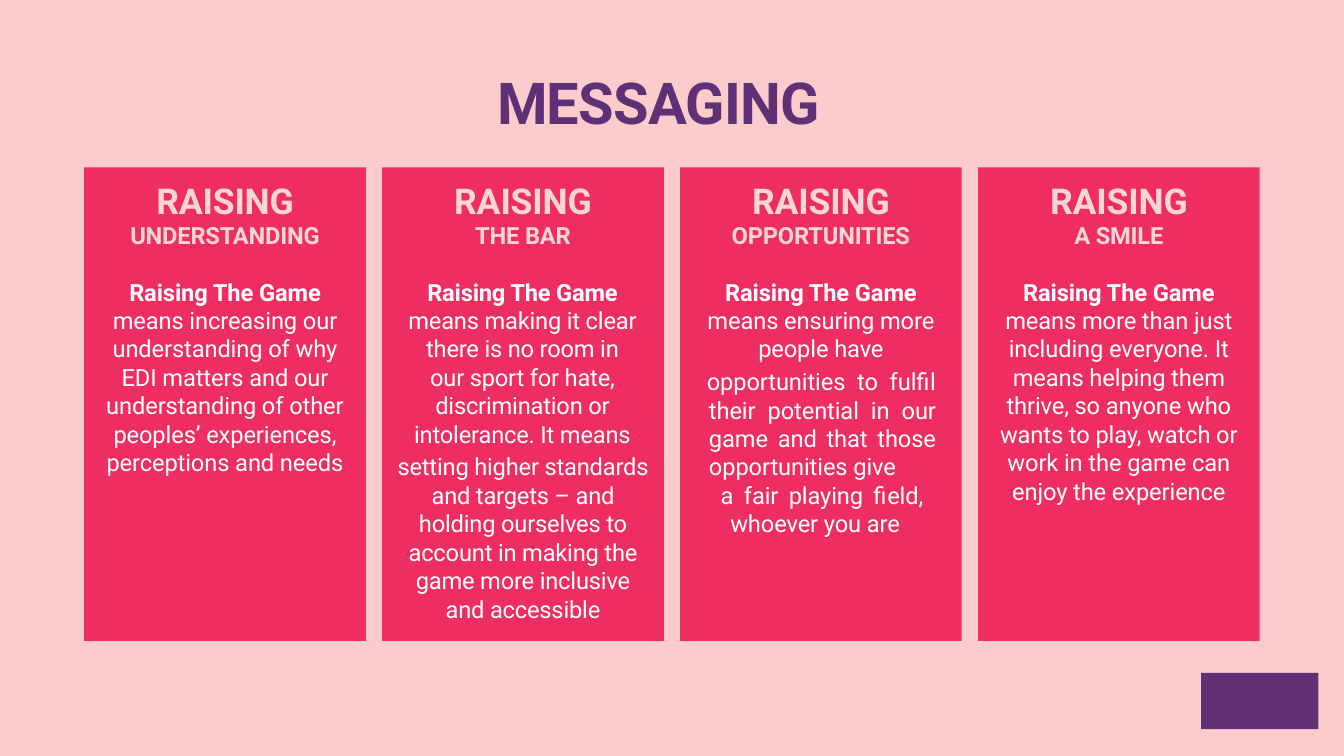
"""Build the messaging slide: a title above four message cards."""
from pptx import Presentation
from pptx.dml.color import RGBColor
from pptx.enum.shapes import MSO_SHAPE
from pptx.enum.text import MSO_ANCHOR, PP_ALIGN
from pptx.util import Inches, Pt

RECT = MSO_SHAPE.RECTANGLE
TOP = MSO_ANCHOR.TOP
LEFT, MID, JUST = PP_ALIGN.LEFT, PP_ALIGN.CENTER, PP_ALIGN.JUSTIFY

FONT = "Roboto"
PINK, RED, ROSE = "FBCCCB", "EE2E62", "FCD6D4"
WHITE, PURPLE = "FFFFFF", "5F3075"

TITLE = "MESSAGING"
HEAD = "RAISING"
LEAD = "Raising The Game "

# Each card: subhead, letter spacing, then (text, align, left, right, first line, space before).
CARDS = [
    ("UNDERSTANDING", -5, [
        ("means increasing our understanding of why EDI matters and our "
         "understanding of other peoples’ experiences, perceptions and needs",
         MID, 0.14, 0.14, 0, 19.3)]),
    ("THE BAR", -10, [
        ("means making it clear there is no room in our sport for hate, "
         "discrimination or intolerance. It means",
         MID, 0.23, 0.24, 0, 19.3),
        ("setting higher standards and targets – and holding ourselves to "
         "account in making the game more inclusive and accessible",
         MID, 0.13, 0.13, 0, 2.9)]),
    ("OPPORTUNITIES", -5, [
        ("means ensuring more people have", MID, 0.21, 0.21, 0, 19.3),
        ("opportunities to fulfil their potential in our game and that those "
         "opportunities give", JUST, 0.27, 0.24, -0.02, 2.9),
        ("a fair playing field, whoever you are",
         JUST, 0.47, 0.36, -0.09, 0)]),
    ("A SMILE", -5, [
        ("means more than just including everyone. It means helping them "
         "thrive, so anyone who wants to play, watch or work in the game can "
         "enjoy the experience", MID, 0.16, 0.16, 0, 19.3)]),
]

WIDE, HIGH = 12.6, 7.09
EDGE, CARD_Y, CARD_W, CARD_H = 0.79, 1.57, 2.64, 4.44
STEP = (WIDE - 2 * EDGE - CARD_W) / (len(CARDS) - 1)


def paint(fill, color):
    fill.solid()
    fill.fore_color.rgb = RGBColor.from_string(color)


def block(slide, x, y, w, h, color):
    shape = slide.shapes.add_shape(
        RECT, Inches(x), Inches(y), Inches(w), Inches(h))
    shape.shadow.inherit = False
    paint(shape.fill, color)
    shape.line.fill.background()
    return shape


def set_frame(frame, top):
    frame.word_wrap = True
    frame.vertical_anchor = TOP
    frame.margin_left = frame.margin_right = frame.margin_bottom = 0
    frame.margin_top = Inches(top)


def style(para, size, color, bold, align):
    para.alignment = align
    font = para.font
    font.name, font.size, font.bold = FONT, Pt(size), bold
    font.color.rgb = RGBColor.from_string(color)


def add_run(para, text, track):
    run = para.add_run()
    run.text = text
    run._r.get_or_add_rPr().set("spc", str(track))
    return run


def add_card(slide, x, sub, track, body):
    frame = block(slide, x, CARD_Y, CARD_W, CARD_H, RED).text_frame
    set_frame(frame, 0.12)

    para = frame.paragraphs[0]
    for text, size, pitch in ((HEAD, 24, 28), (sub, 16, 18.4)):
        style(para, size, ROSE, True, MID)
        para.line_spacing = Pt(pitch)
        add_run(para, text, -10)
        para = frame.add_paragraph()

    for i, (text, align, left, right, first, before) in enumerate(body):
        if i:
            para = frame.add_paragraph()
        style(para, 16, WHITE, False, align)
        para.space_before = Pt(before)
        props = para._p.get_or_add_pPr()
        for key, size in (("marL", left), ("marR", right), ("indent", first)):
            props.set(key, str(Inches(size)))
        if i == 0:
            add_run(para, LEAD, track).font.bold = True
        add_run(para, text, track)


def main():
    deck = Presentation()
    deck.slide_width, deck.slide_height = Inches(WIDE), Inches(HIGH)
    slide = deck.slides.add_slide(deck.slide_layouts[6])
    paint(slide.background.fill, PINK)

    for i, (sub, track, body) in enumerate(CARDS):
        add_card(slide, EDGE + i * STEP, sub, track, body)

    title = slide.shapes.add_textbox(
        Inches(4.65), Inches(0.62), Inches(3.28), Inches(0.68)).text_frame
    set_frame(title, 0.01)
    title.margin_left = Inches(0.01)
    style(title.paragraphs[0], 39, PURPLE, True, LEFT)
    add_run(title.paragraphs[0], TITLE, -50)

    block(slide, 11.26, 6.31, 1.1, 0.53, PURPLE)
    deck.save("out.pptx")


if __name__ == "__main__":
    main()
